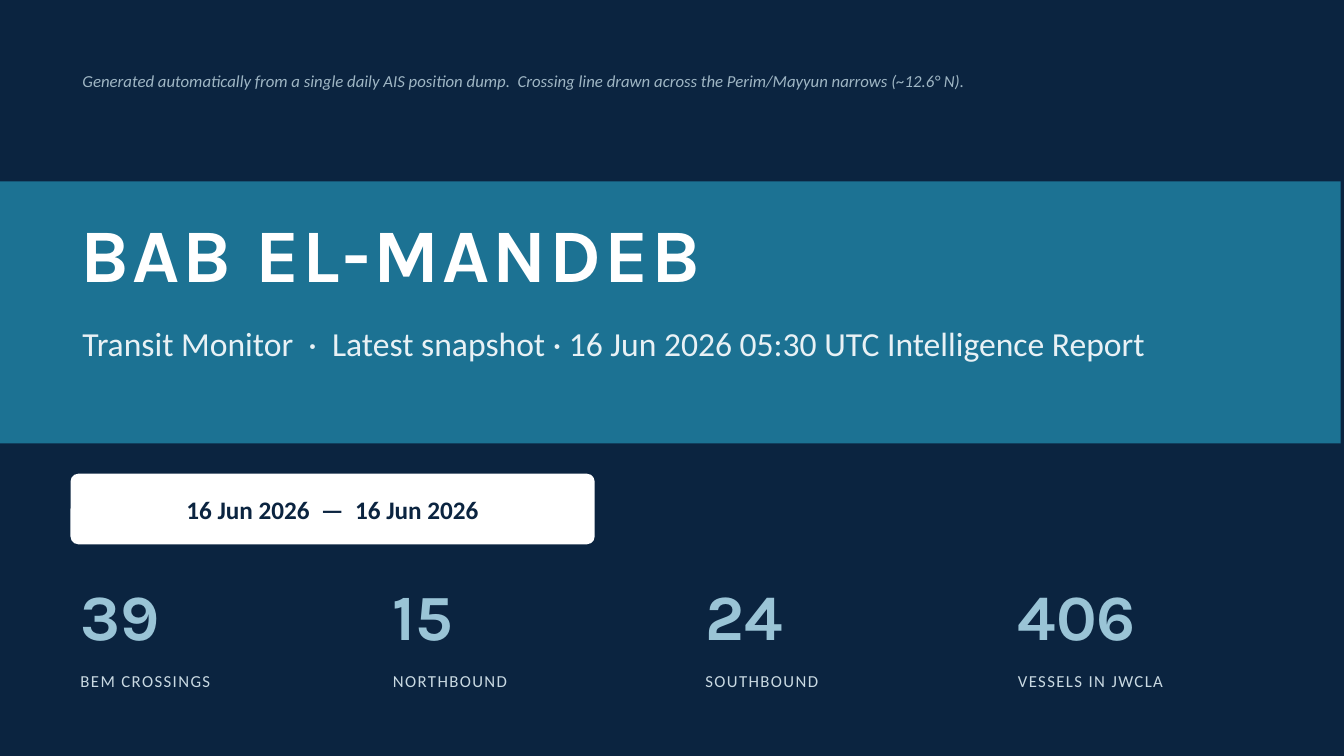
import pptx
import pptx.util
import pptx.dml.color
import pptx.enum.shapes
import pptx.enum.text

Pt = pptx.util.Pt
SHAPE = pptx.enum.shapes.MSO_SHAPE
ALIGN = pptx.enum.text.PP_ALIGN


def paint(color_format, value):
    color_format.rgb = pptx.dml.color.RGBColor.from_string(value)


def write(sp, text, size, color, font="Calibri", bold=False, italic=False,
          spacing=0, align=ALIGN.LEFT):
    tf = sp.text_frame
    tf.word_wrap = True
    tf.vertical_anchor = pptx.enum.text.MSO_ANCHOR.MIDDLE
    p = tf.paragraphs[0]
    p.text = text
    p.alignment = align
    p.font.name = font
    p.font.size = Pt(size)
    p.font.bold = bold
    p.font.italic = italic
    paint(p.font.color, color)
    if spacing:
        p.font._element.set("spc", str(spacing * 100))


prs = pptx.Presentation()
prs.slide_width = Pt(960)
prs.slide_height = Pt(540)
s = prs.slides.add_slide(prs.slide_layouts[6])
s.background.fill.solid()
paint(s.background.fill.fore_color, "0B2440")

band = s.shapes.add_shape(SHAPE.RECTANGLE, Pt(0), Pt(129.6), Pt(957.6), Pt(187.2))
pill = s.shapes.add_shape(SHAPE.ROUNDED_RECTANGLE, Pt(50.4), Pt(338.4), Pt(374.4), Pt(50.4))
pill.adjustments[0] = 0.11
for sp, color in [(band, "1C7293"), (pill, "FFFFFF")]:
    sp.shadow.inherit = False
    sp.fill.solid()
    paint(sp.fill.fore_color, color)
    sp.line.fill.background()
write(pill, "16 Jun 2026  —  16 Jun 2026", 18, "0B2440", bold=True, align=ALIGN.CENTER)

title = s.shapes.add_textbox(Pt(50.4), Pt(140.4), Pt(856.8), Pt(79.2))
write(title, "BAB EL-MANDEB", 54, "FFFFFF", font="Karla", bold=True, spacing=2)

subtitle = s.shapes.add_textbox(Pt(51.84), Pt(219.6), Pt(856.8), Pt(50.4))
write(subtitle,
      "Transit Monitor  ·  Latest snapshot · 16 Jun 2026 05:30 UTC Intelligence Report",
      24, "E8F1F5")

stats = [
    ("39", "BEM CROSSINGS"),
    ("15", "NORTHBOUND"),
    ("24", "SOUTHBOUND"),
    ("406", "VESSELS IN JWCLA"),
]
for i, (value, label) in enumerate(stats):
    left = Pt(50.4 + i * 223.2)
    sp = s.shapes.add_textbox(left, Pt(406.8), Pt(205.2), Pt(64.8))
    write(sp, value, 46, "9AC4D6", font="Karla", bold=True)
    sp = s.shapes.add_textbox(left, Pt(471.6), Pt(205.2), Pt(28.8))
    write(sp, label, 12, "C9D9E2", spacing=1)

note = s.shapes.add_textbox(Pt(51.84), Pt(39.6), Pt(856.8), Pt(36))
write(note,
      "Generated automatically from a single daily AIS position dump.  "
      "Crossing line drawn across the Perim/Mayyun narrows (~12.6° N).",
      12, "9FB6C4", italic=True)

prs.save("out.pptx")
